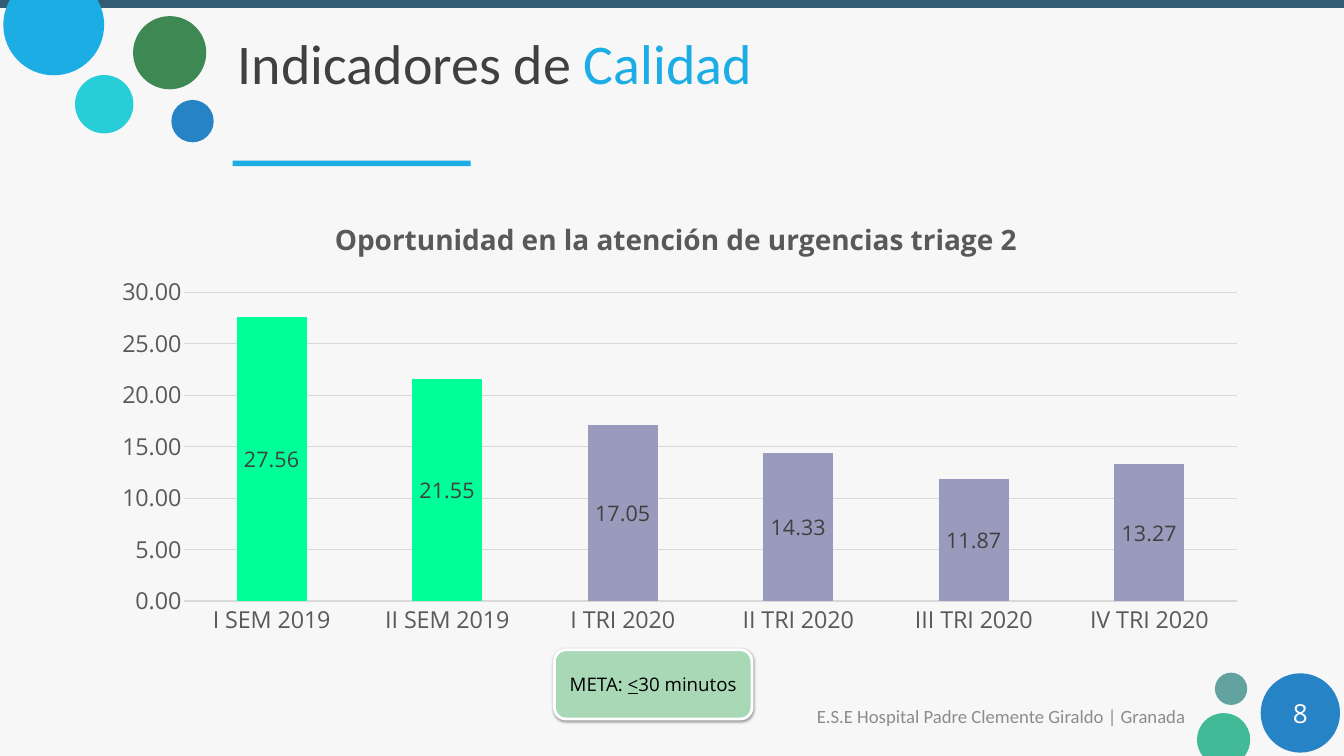
"""Build the quality indicator slide on urgent care timeliness."""
from dataclasses import dataclass
from math import cos, radians, sin, tan
from typing import Any, NamedTuple

from lxml import etree
from pptx import Presentation
from pptx.chart.data import CategoryChartData
from pptx.dml.color import RGBColor
from pptx.enum.chart import XL_CHART_TYPE, XL_LABEL_POSITION, XL_TICK_MARK
from pptx.enum.shapes import MSO_SHAPE
from pptx.enum.text import MSO_ANCHOR, PP_ALIGN
from pptx.oxml.ns import qn
from pptx.util import Pt

STACKED = XL_CHART_TYPE.COLUMN_STACKED
LABEL_CENTER = XL_LABEL_POSITION.CENTER
NO_TICK = XL_TICK_MARK.NONE
RECTANGLE, OVAL, ROUNDED = MSO_SHAPE.RECTANGLE, MSO_SHAPE.OVAL, MSO_SHAPE.ROUNDED_RECTANGLE
MIDDLE = MSO_ANCHOR.MIDDLE
LEFT, CENTER, RIGHT = PP_ALIGN.LEFT, PP_ALIGN.CENTER, PP_ALIGN.RIGHT
SLIDE_WIDTH, SLIDE_HEIGHT = 1440, 810


@dataclass(frozen=True)
class Theme:
    heading_font: str = "Calibri"
    body_font: str = "Open Sans"
    background: str = "F7F7F7"
    band: str = "335B74"
    accent: str = "1CADE4"
    blue: str = "2683C6"
    cyan: str = "27CED7"
    green: str = "3E8853"
    teal: str = "62A39F"
    mint: str = "42BA97"
    goal: str = "A9D8B7"
    semester: str = "00FF99"
    quarter: str = "9A9ABC"
    white: str = "FFFFFF"
    black: str = "000000"
    dark: str = "404040"
    axis: str = "595959"
    footer: str = "8C8C8C"
    grid: str = "D9D9D9"
    title_size: float = 60
    chart_title_size: float = 30
    number_size: float = 28
    axis_size: float = 25
    label_size: float = 23
    small_size: float = 20


THEME = Theme()


class Box(NamedTuple):
    left: float
    top: float
    width: float
    height: float


class Circle(NamedTuple):
    center_x: float
    center_y: float
    radius: float
    color: str


class CutCircle(NamedTuple):
    circle: Circle
    angles: list[float]


class Span(NamedTuple):
    text: str
    color: str
    underline: bool = False


class Indicator(NamedTuple):
    period: str
    minutes: float
    color: str


CIRCLES = [
    Circle(206.3, 129.8, 22.7, THEME.blue),
    Circle(111.7, 111.7, 31.3, THEME.cyan),
    Circle(181.8, 56.5, 39.2, THEME.green),
    Circle(1319, 738, 17.3, THEME.teal),
    Circle(1393.2, 763.9, 42.5, THEME.blue),
]
CUT_CIRCLES = [
    CutCircle(Circle(57.6, 26.65, 54, THEME.accent), [-29.57, 0, 90, 180, 209.57]),
    CutCircle(Circle(1311, 792.5, 28.5, THEME.mint), [142.12, 180, 270, 360, 397.88]),
]
INDICATORS = [
    Indicator("I SEM 2019", 27.56, THEME.semester),
    Indicator("II SEM 2019", 21.55, THEME.semester),
    Indicator("I TRI 2020", 17.05, THEME.quarter),
    Indicator("II TRI 2020", 14.33, THEME.quarter),
    Indicator("III TRI 2020", 11.87, THEME.quarter),
    Indicator("IV TRI 2020", 13.27, THEME.quarter),
]
CHART_TITLE = "Oportunidad en la atención de urgencias triage 2 "


def set_values(target: Any, values: dict[str, Any]) -> None:
    for name, value in values.items():
        setattr(target, name, value)


def set_font(font: Any, name: str, size: float, color: str, **extra: Any) -> None:
    set_values(font, {"name": name, "size": Pt(size), "bold": False, **extra})
    font.color.rgb = RGBColor.from_string(color)


def set_fill(target: Any, color: str) -> None:
    target.fill.solid()
    target.fill.fore_color.rgb = RGBColor.from_string(color)


def finish(shape: Any, color: str) -> None:
    set_fill(shape, color)
    shape.line.fill.background()
    shape.shadow.inherit = False


def add_shape(slide: Any, kind: Any, box: Box, color: str) -> Any:
    shape = slide.shapes.add_shape(kind, *map(Pt, box))
    finish(shape, color)
    return shape


def add_circle(slide: Any, circle: Circle) -> None:
    x, y, radius, color = circle
    add_shape(slide, OVAL, Box(x - radius, y - radius, 2 * radius, 2 * radius), color)


def circle_point(circle: Circle, angle: float, offset: float = 0) -> tuple[int, int]:
    turn = radians(angle)
    x = circle.center_x + circle.radius * (cos(turn) - offset * sin(turn))
    y = circle.center_y + circle.radius * (sin(turn) + offset * cos(turn))
    return Pt(x), Pt(y)


def add_cut_circle(slide: Any, cut: CutCircle) -> None:
    circle, angles = cut
    points = []
    for start, end in zip(angles, angles[1:]):
        handle = 4 / 3 * tan(radians(end - start) / 4)
        points += [circle_point(circle, start, handle), circle_point(circle, end, -handle),
                   circle_point(circle, end)]
    builder = slide.shapes.build_freeform(*circle_point(circle, angles[0]))
    builder.add_line_segments(points, close=False)
    shape = builder.convert_to_shape()
    outline = next(shape._element.iter(qn("a:moveTo"))).getparent()
    lines = outline.findall(qn("a:lnTo"))
    for first in range(0, len(lines), 3):
        curve = etree.SubElement(outline, qn("a:cubicBezTo"))
        for line in lines[first:first + 3]:
            curve.append(line[0])
            outline.remove(line)
    etree.SubElement(outline, qn("a:close"))
    finish(shape, circle.color)


def write(shape: Any, spans: list[Span], font: str, size: float,
          alignment: Any, inset: tuple[float, float] = (13, 6.5)) -> None:
    horizontal, vertical = map(Pt, inset)
    frame = shape.text_frame
    set_values(frame, {
        "word_wrap": True, "vertical_anchor": MIDDLE,
        "margin_left": horizontal, "margin_right": horizontal,
        "margin_top": vertical, "margin_bottom": vertical,
    })
    paragraph = frame.paragraphs[0]
    paragraph.alignment = alignment
    for span in spans:
        run = paragraph.add_run()
        run.text = span.text
        set_font(run.font, font, size, span.color, underline=span.underline)


def add_goal(slide: Any) -> None:
    shape = add_shape(slide, ROUNDED, Box(594, 696.2, 211.7, 74.2), THEME.goal)
    set_fill(shape.line, THEME.white)
    shape.line.width = Pt(3)
    effects = shape._element.spPr.find(qn("a:effectLst"))
    shadow = etree.SubElement(effects, qn("a:outerShdw"), blurRad=str(Pt(3.1)),
                              dist=str(Pt(1.6)), dir="5400000", rotWithShape="0")
    color = etree.SubElement(shadow, qn("a:srgbClr"), val=THEME.black)
    etree.SubElement(color, qn("a:alpha"), val="38000")
    spans = [Span("META: ", THEME.black), Span("<", THEME.black, True),
             Span("30 minutos", THEME.black)]
    write(shape, spans, THEME.body_font, THEME.small_size, CENTER, (7.2, 3.6))


def add_indicator_chart(slide: Any) -> None:
    data = CategoryChartData(number_format="0.00")
    data.categories = [indicator.period for indicator in INDICATORS]
    data.add_series(CHART_TITLE, [indicator.minutes for indicator in INDICATORS])
    box = Box(106.1, 214.1, 1244.2, 475.9)
    chart = slide.shapes.add_chart(STACKED, *map(Pt, box), data).chart
    set_values(chart, {"has_legend": False, "has_title": True})
    set_font(chart.font, THEME.body_font, THEME.axis_size, THEME.black)
    title = chart.chart_title
    title.include_in_layout = False
    run = title.text_frame.paragraphs[0].add_run()
    run.text = CHART_TITLE
    set_font(run.font, THEME.body_font, THEME.chart_title_size, THEME.axis, bold=True)

    for axis in (chart.category_axis, chart.value_axis):
        set_values(axis, {"major_tick_mark": NO_TICK, "minor_tick_mark": NO_TICK})
        set_font(axis.tick_labels.font, THEME.body_font, THEME.axis_size, THEME.axis)
    value_axis = chart.value_axis
    set_values(value_axis.tick_labels, {"number_format": "0.00", "number_format_is_linked": False})
    value_axis.format.line.fill.background()
    lines = ((chart.category_axis.format.line, 1), (value_axis.major_gridlines.format.line, 0.75))
    for line, width in lines:
        set_fill(line, THEME.grid)
        line.width = Pt(width)

    plot = chart.plots[0]
    set_values(plot, {"gap_width": 150, "overlap": 100, "vary_by_categories": False})
    series = plot.series[0]
    set_fill(series.format, THEME.teal)
    for index, indicator in enumerate(INDICATORS):
        set_fill(series.points[index].format, indicator.color)
    labels = series.data_labels
    set_values(labels, {"show_value": True, "number_format": "0.00",
                        "number_format_is_linked": False, "position": LABEL_CENTER})
    set_font(labels.font, THEME.body_font, THEME.label_size, THEME.dark)


def main() -> None:
    presentation = Presentation()
    set_values(presentation, {"slide_width": Pt(SLIDE_WIDTH), "slide_height": Pt(SLIDE_HEIGHT)})
    slide = presentation.slides.add_slide(presentation.slide_layouts[5])
    set_fill(slide.background, THEME.background)

    title = slide.shapes.title
    title_box = Box(241.9, 19.4, 1129.7, 95)
    set_values(title, dict(zip(Box._fields, map(Pt, title_box))))
    write(title, [Span("Indicadores de ", THEME.dark), Span("Calidad", THEME.accent)],
          THEME.heading_font, THEME.title_size, LEFT)

    add_shape(slide, RECTANGLE, Box(0, 0, SLIDE_WIDTH, 8.6), THEME.band)
    for circle in CIRCLES:
        add_circle(slide, circle)
    for cut in CUT_CIRCLES:
        add_cut_circle(slide, cut)
    add_shape(slide, RECTANGLE, Box(249.4, 172.1, 254.9, 5.8), THEME.accent)

    footer = slide.shapes.add_textbox(*map(Pt, Box(827.3, 745.2, 455.8, 43.2)))
    write(footer, [Span("E.S.E Hospital Padre Clemente Giraldo | Granada", THEME.footer)],
          THEME.heading_font, THEME.small_size, RIGHT)
    number = slide.shapes.add_textbox(*map(Pt, Box(1350.7, 742.6, 85, 43.2)))
    write(number, [Span("8", THEME.white)], THEME.body_font, THEME.number_size, CENTER)

    add_indicator_chart(slide)
    add_goal(slide)
    presentation.save("out.pptx")


if __name__ == "__main__":
    main()
